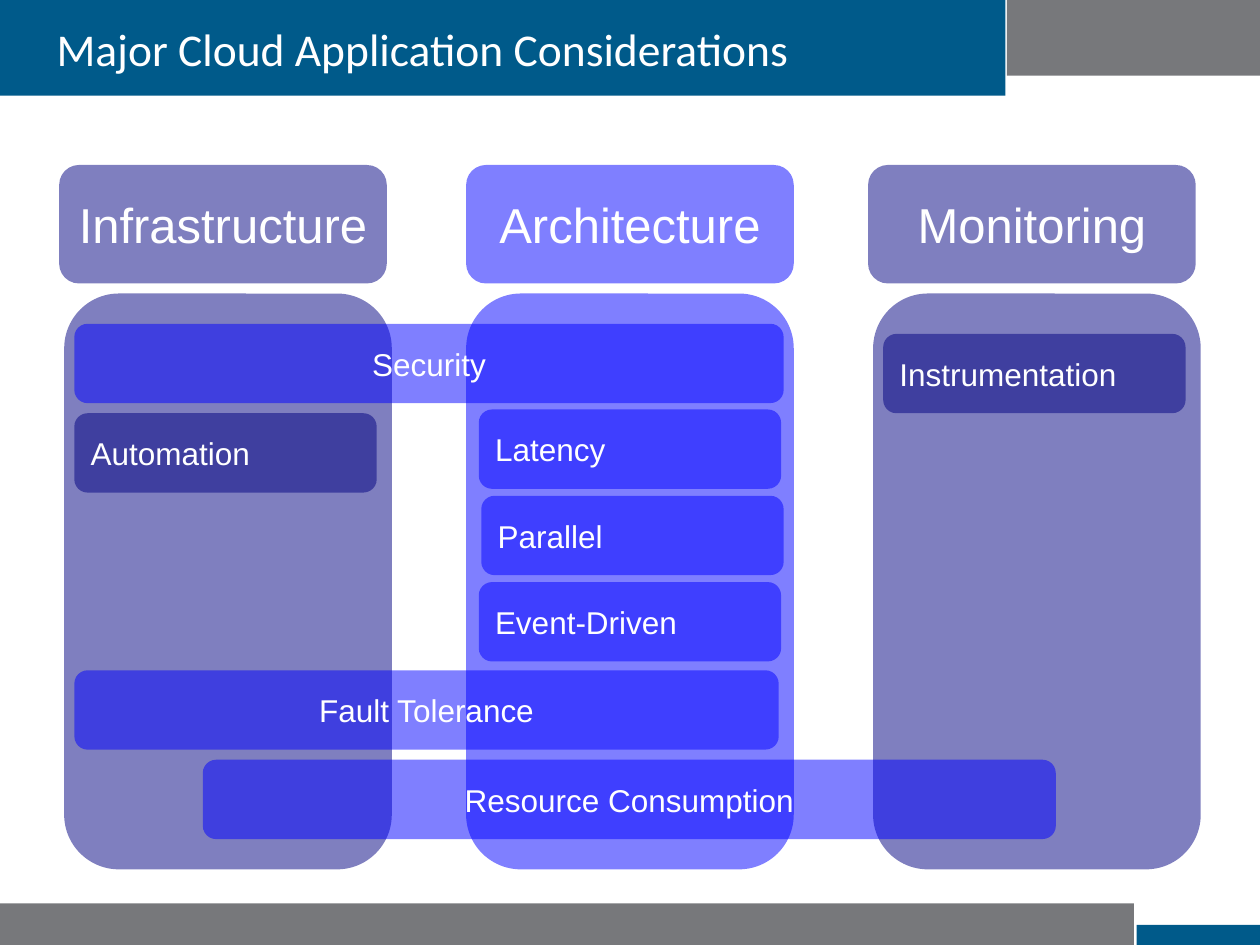
from lxml.etree import SubElement
from pptx import Presentation
from pptx.dml.color import RGBColor
from pptx.enum.shapes import MSO_SHAPE
from pptx.enum.text import MSO_ANCHOR, PP_ALIGN
from pptx.oxml.ns import qn
from pptx.util import Inches, Pt

WHITE = RGBColor(0xFF, 0xFF, 0xFF)
GRAY = RGBColor(0x77, 0x78, 0x7B)
TEAL = RGBColor(0x00, 0x5A, 0x8A)
NAVY = RGBColor(0x00, 0x00, 0x80)
BLUE = RGBColor(0x00, 0x00, 0xFF)

presentation = Presentation()
presentation.slide_width = Inches(10)
presentation.slide_height = Inches(7.5)
slide = presentation.slides.add_slide(presentation.slide_layouts[6])


def add_block(kind, left, top, width, height, color):
    shape = slide.shapes.add_shape(
        kind, Inches(left), Inches(top), Inches(width), Inches(height)
    )
    shape.shadow.inherit = False
    shape.fill.solid()
    shape.fill.fore_color.rgb = color
    shape.line.fill.background()
    if kind == MSO_SHAPE.ROUNDED_RECTANGLE:
        shape.adjustments[0] = 0.167
        solid_color = shape.fill._xPr.find(qn("a:solidFill"))[0]
        SubElement(solid_color, qn("a:alpha"), val="50000")
    return shape


def write_text(shape, text, size, alignment, font_name="Arial", wrap=False):
    text_frame = shape.text_frame
    text_frame.text = text
    text_frame.word_wrap = wrap
    text_frame.vertical_anchor = MSO_ANCHOR.MIDDLE
    paragraph = text_frame.paragraphs[0]
    paragraph.alignment = alignment
    font = paragraph.runs[0].font
    font.name = font_name
    font.size = Pt(size)
    font.color.rgb = WHITE


for left, top, width, height, color in [
    (0, 7.17, 9, 0.33, GRAY),
    (0, 0, 7.98, 0.76, TEAL),
    (7.99, 0, 2.01, 0.6, GRAY),
    (9.02, 7.34, 0.98, 0.16, TEAL),
]:
    add_block(MSO_SHAPE.RECTANGLE, left, top, width, height, color)

title = slide.shapes.add_textbox(Inches(0.35), 0, Inches(7.32), Inches(0.76))
write_text(
    title, "Major Cloud Application Considerations", 26, PP_ALIGN.LEFT, "Calibri", True
)

COLUMN_WIDTH = 2.6
columns = [
    ("Infrastructure", 0.47, 0.51, NAVY),
    ("Architecture", 3.7, 3.7, BLUE),
    ("Monitoring", 6.89, 6.93, NAVY),
]
for name, header_left, body_left, color in columns:
    add_block(
        MSO_SHAPE.ROUNDED_RECTANGLE, body_left, 2.33, COLUMN_WIDTH, 4.57, color
    )
for name, header_left, body_left, color in columns:
    header = add_block(
        MSO_SHAPE.ROUNDED_RECTANGLE, header_left, 1.31, COLUMN_WIDTH, 0.94, color
    )
    write_text(header, name, 28, PP_ALIGN.CENTER)

ITEM_WIDTH = 2.4
ITEM_HEIGHT = 0.63
STACK_TOP = 3.25
STACK_STEP = 0.685
items = [
    ("Automation", 0.59, 3.28, ITEM_WIDTH, NAVY),
    ("Latency", 3.8, STACK_TOP, ITEM_WIDTH, BLUE),
    ("Instrumentation", 7.01, 2.65, ITEM_WIDTH, NAVY),
    ("Parallel", 3.82, STACK_TOP + STACK_STEP, ITEM_WIDTH, BLUE),
    ("Event-Driven", 3.8, STACK_TOP + 2 * STACK_STEP, ITEM_WIDTH, BLUE),
    ("Resource Consumption", 1.61, 6.03, 6.77, BLUE),
    ("Security", 0.59, 2.57, 5.63, BLUE),
    ("Fault Tolerance", 0.59, 5.32, 5.59, BLUE),
]
for name, left, top, width, color in items:
    item = add_block(
        MSO_SHAPE.ROUNDED_RECTANGLE, left, top, width, ITEM_HEIGHT, color
    )
    alignment = PP_ALIGN.CENTER if width > ITEM_WIDTH else PP_ALIGN.LEFT
    write_text(item, name, 18, alignment)

presentation.save("out.pptx")
